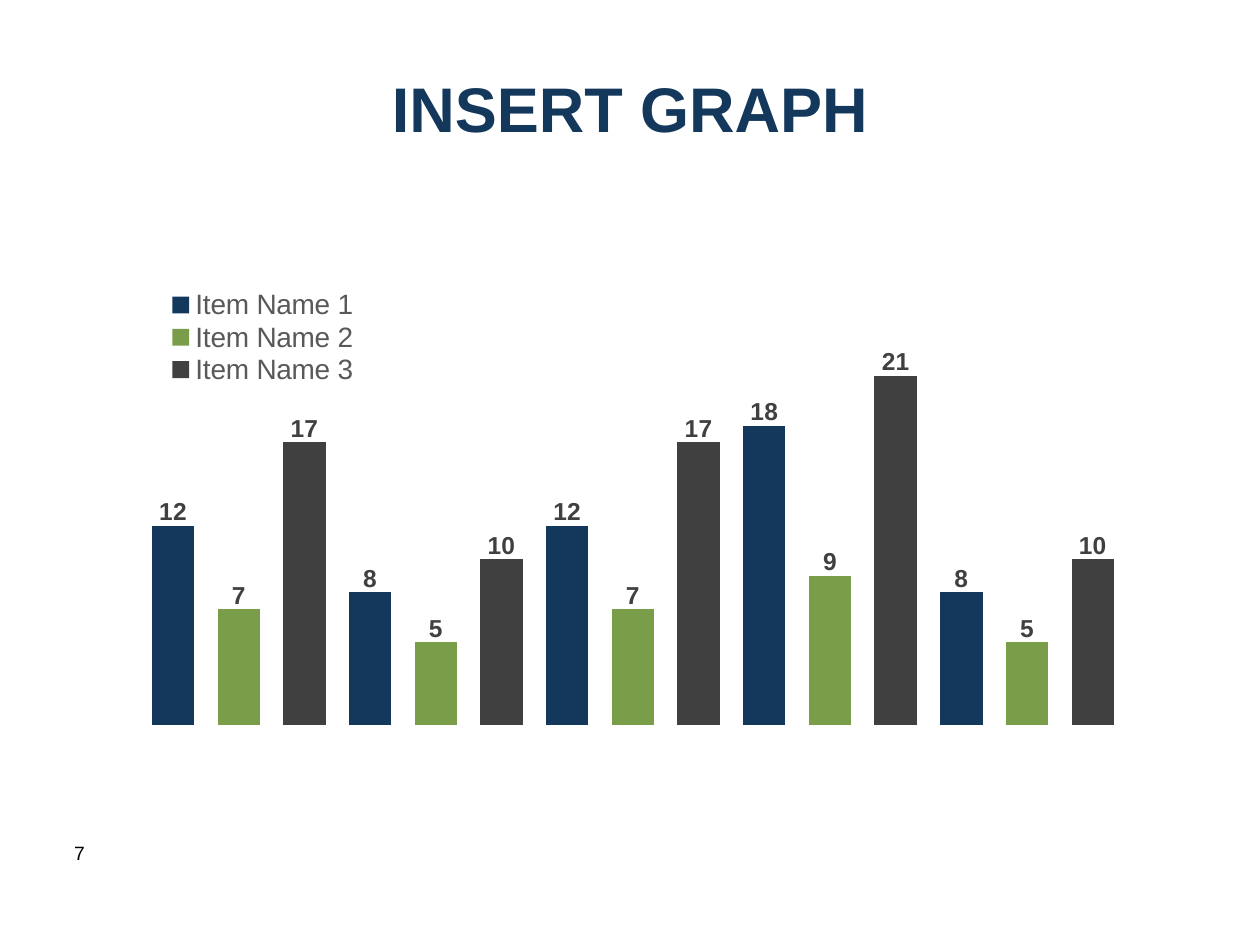
from dataclasses import dataclass

from lxml import etree
from pptx import Presentation
from pptx import util as u
from pptx.chart import data as chart_data
from pptx.dml.color import RGBColor
from pptx.enum import chart as charts, text
from pptx.oxml import ns

FONT = "Arial"
NAVY = RGBColor(0x13, 0x38, 0x5C)
GREEN = RGBColor(0x79, 0x9D, 0x49)
CHARCOAL = RGBColor(0x40, 0x40, 0x41)
LABEL_GRAY = RGBColor(0x40, 0x40, 0x40)
LEGEND_GRAY = RGBColor(0x59, 0x59, 0x59)
BLACK = RGBColor(0, 0, 0)
WHITE = RGBColor(0xFF, 0xFF, 0xFF)

GROUP_SIZE = 3
GROUP_COUNT = 5
LABEL_LIFT = -0.065


@dataclass(frozen=True)
class Item:
    name: str
    color: RGBColor
    slot: int
    values: tuple[int, ...]

    def spread(self) -> list[int | None]:
        columns: list[int | None] = [None] * (GROUP_SIZE * GROUP_COUNT)
        columns[self.slot::GROUP_SIZE] = self.values
        return columns


ITEMS = (
    Item("Item Name 3", CHARCOAL, 2, (17, 10, 17, 21, 10)),
    Item("Item Name 2", GREEN, 1, (7, 5, 7, 9, 5)),
    Item("Item Name 1", NAVY, 0, (12, 8, 12, 18, 8)),
)


def set_font(font, size: float, color: RGBColor, bold: bool = False) -> None:
    font.name = FONT
    font.size = u.Pt(size)
    font.bold = bold
    font.color.rgb = color


def add_text(slide, content: str, *, left: float, top: float, width: float,
             height: float, size: float, color: RGBColor, bold: bool = False,
             align=text.PP_ALIGN.LEFT, anchor=text.MSO_ANCHOR.TOP) -> None:
    shape = slide.shapes.add_textbox(u.Pt(left), u.Pt(top), u.Pt(width), u.Pt(height))
    frame = shape.text_frame
    frame.word_wrap = True
    frame.vertical_anchor = anchor
    paragraph = frame.paragraphs[0]
    paragraph.alignment = align
    run = paragraph.add_run()
    run.text = content
    set_font(run.font, size, color, bold)


def make_layout(**settings):
    layout = etree.Element(ns.qn("c:layout"))
    manual = etree.SubElement(layout, ns.qn("c:manualLayout"))
    for name, value in settings.items():
        etree.SubElement(manual, ns.qn(f"c:{name}")).set("val", str(value))
    return layout


def edge_layout(x: float, y: float, w: float, h: float, **target):
    return make_layout(**target, xMode="edge", yMode="edge", x=x, y=y, w=w, h=h)


def replace_layout(parent, layout, before: tuple[str, ...]) -> None:
    for old in parent.findall(ns.qn("c:layout")):
        parent.remove(old)
    names = [ns.qn(name) for name in before]
    index = next((i for i, child in enumerate(parent) if child.tag in names), len(parent))
    parent.insert(index, layout)


def format_series(series, item: Item) -> None:
    series.format.fill.solid()
    series.format.fill.fore_color.rgb = item.color
    series.invert_if_negative = False
    labels = series.data_labels
    labels.show_value = True
    labels.position = charts.XL_LABEL_POSITION.INSIDE_END
    set_font(labels.font, 14, LABEL_GRAY, True)
    for index, value in enumerate(item.spread()):
        if value is not None:
            label = series.points[index].data_label
            label.position = charts.XL_LABEL_POSITION.INSIDE_END
            set_font(label.font, 14, LABEL_GRAY, True)
    for element in series._element.iter(ns.qn("c:dLbl")):
        element.insert(1, make_layout(x=0, y=LABEL_LIFT))
    for element in series._element.iter(ns.qn("c:showLeaderLines")):
        element.set("val", "0")


def add_item_chart(slide) -> None:
    data = chart_data.CategoryChartData()
    data.categories = [str(n + 1) for n in range(GROUP_SIZE * GROUP_COUNT)]
    for item in ITEMS:
        data.add_series(item.name, item.spread())
    chart = slide.shapes.add_chart(
        charts.XL_CHART_TYPE.COLUMN_STACKED,
        u.Pt(18), u.Pt(144.72), u.Pt(660.96), u.Pt(282.96), data).chart
    set_font(chart.font, 10, BLACK)
    chart.has_title = False
    chart.category_axis.visible = False
    chart.value_axis.visible = False
    chart.value_axis.has_major_gridlines = False
    chart.value_axis.minimum_scale = 0
    chart.value_axis.maximum_scale = 25

    plot = chart.plots[0]
    plot.gap_width = 55
    plot.overlap = 100
    plot.vary_by_categories = False
    for series, item in zip(plot.series, ITEMS):
        format_series(series, item)

    chart.has_legend = True
    legend = chart.legend
    legend.position = charts.XL_LEGEND_POSITION.RIGHT
    legend.include_in_layout = False
    set_font(legend.font, 16, LEGEND_GRAY)
    replace_layout(legend._element, edge_layout(0.11, 0.07, 0.18, 0.2),
                   ("c:overlay", "c:spPr", "c:txPr"))
    plot_area = chart._chartSpace.find(".//" + ns.qn("c:plotArea"))
    replace_layout(plot_area,
                   edge_layout(0.094, 0.113, 0.852, 0.841, layoutTarget="inner"),
                   ("c:barChart",))


def main() -> None:
    presentation = Presentation()
    presentation.slide_width = u.Pt(720)
    presentation.slide_height = u.Pt(540)
    slide = presentation.slides.add_slide(presentation.slide_layouts[6])
    slide.background.fill.solid()
    slide.background.fill.fore_color.rgb = WHITE
    add_text(slide, "7", left=35.28, top=477.36, width=30.96, height=38.88,
             size=11, color=BLACK)
    add_item_chart(slide)
    add_text(slide, "INSERT GRAPH", left=133.92, top=37.44, width=452.16, height=48.24,
             size=36, color=NAVY, bold=True, align=text.PP_ALIGN.CENTER,
             anchor=text.MSO_ANCHOR.MIDDLE)
    presentation.save("out.pptx")


if __name__ == "__main__":
    main()
